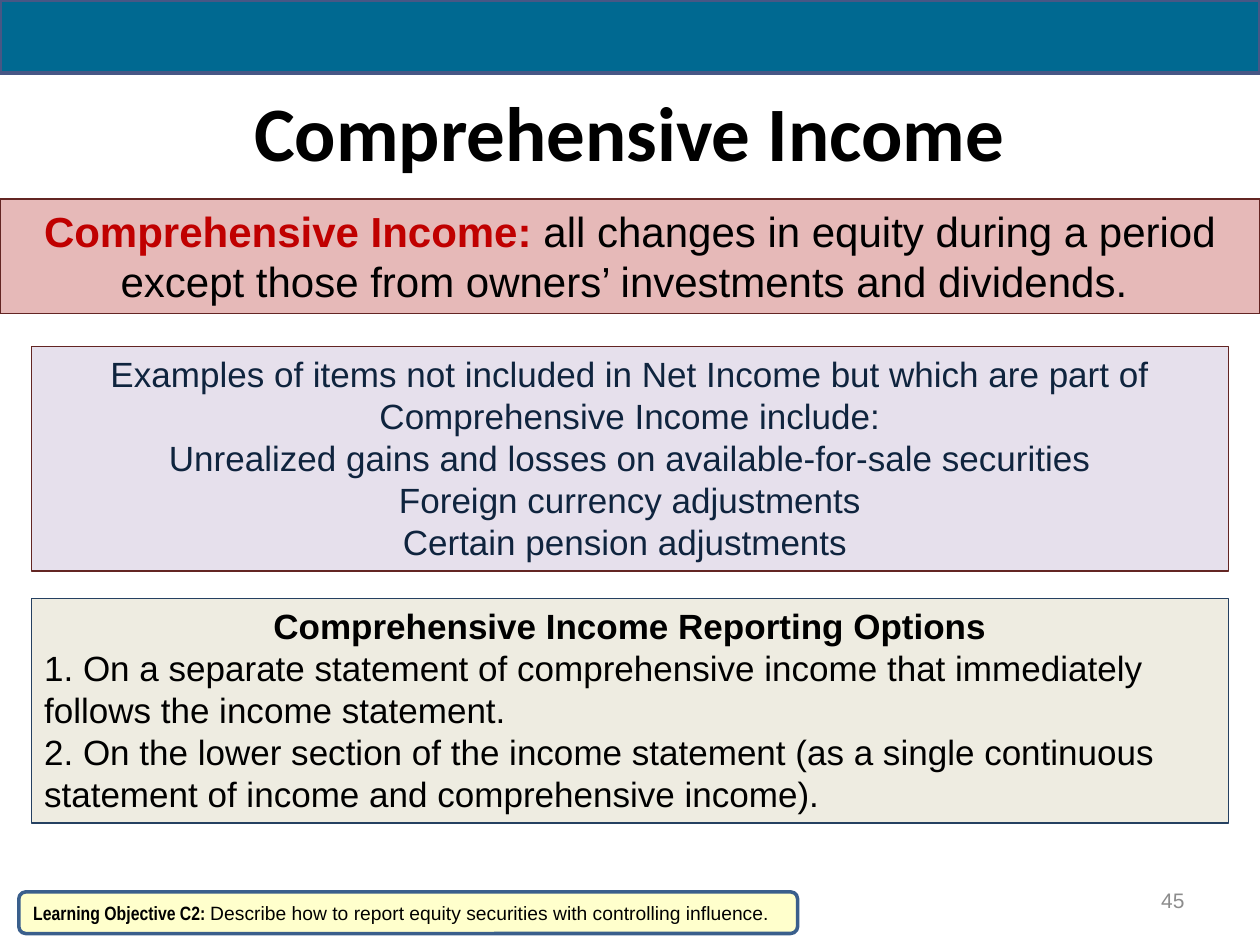
import pptx
from pptx.dml.color import RGBColor
from pptx.enum.shapes import MSO_SHAPE
from pptx.enum.text import MSO_ANCHOR, PP_ALIGN
from pptx.util import Cm, Pt

LEFT, CENTER, RIGHT = PP_ALIGN.LEFT, PP_ALIGN.CENTER, PP_ALIGN.RIGHT
TOP, MIDDLE = MSO_ANCHOR.TOP, MSO_ANCHOR.MIDDLE
RECT, ROUNDED = MSO_SHAPE.RECTANGLE, MSO_SHAPE.ROUNDED_RECTANGLE

# Content: a paragraph is (alignment, runs); a run is (text, size, colour, bold, font)
TITLE = [(CENTER, [("Comprehensive Income", 44, "000000", True, "Calibri")])]

DEFINITION = [(CENTER, [
    ("Comprehensive Income: ", 24, "C00000", True, "Arial"),
    ("all changes in equity during a period except those from owners’ "
     "investments and dividends. ", 24, "000000", False, "Arial"),
])]

EXAMPLES = [(CENTER, [(line, 20, "0F243E", False, "Arial")]) for line in (
    "Examples of items not included in Net Income but which are part of "
    "Comprehensive Income include:",
    "Unrealized gains and losses on available-for-sale securities",
    "Foreign currency adjustments",
    "Certain pension adjustments ",
)]

OPTIONS = [(align, [(line, 20, "000000", bold, "Arial")]) for align, bold, line in (
    (CENTER, True, "Comprehensive Income Reporting Options"),
    (LEFT, False, "1. On a separate statement of comprehensive income that "
                  "immediately follows the income statement."),
    (LEFT, False, "2. On the lower section of the income statement (as a single "
                  "continuous statement of income and comprehensive income)."),
)]

OBJECTIVE = [(LEFT, [
    ("Learning Objective C2: ", 11, "000000", True, "Arial Narrow"),
    ("Describe how to report equity securities with controlling influence.",
     11, "000000", False, "Arial"),
])]

PAGE_NUMBER = [(RIGHT, [("45", 12, "8C8C8C", False, "Arial")])]

# Layout in centimetres
WIDTH, HEIGHT = 25.4, 19.05
MARGIN = 0.64
BANNER_HEIGHT = 1.47
PANEL_TOP, PANEL_HEIGHT, PANEL_PITCH = 6.99, 4.52, 5.08
PANEL_WIDTH = WIDTH - 2 * MARGIN

# Boxes: outline, (left, top, width, height), fill, line, line width, anchor, content
BOXES = [
    (RECT, (0, 4.01, WIDTH, 2.31), "E6B9B8", "632523", 0.75, TOP, DEFINITION),
    (RECT, (MARGIN, PANEL_TOP, PANEL_WIDTH, PANEL_HEIGHT),
     "E6E0EC", "632523", 0.75, TOP, EXAMPLES),
    (RECT, (MARGIN, PANEL_TOP + PANEL_PITCH, PANEL_WIDTH, PANEL_HEIGHT),
     "EEECE1", "254061", 0.75, TOP, OPTIONS),
    (RECT, (0, 0, WIDTH, BANNER_HEIGHT), "006991", "475785", 2.25, MIDDLE, []),
    (ROUNDED, (0.38, 17.98, 15.7, 0.84), "FFFFCC", "3A5F8C", 2, MIDDLE, OBJECTIVE),
]


def rgb(value):
    return RGBColor.from_string(value)


def lengths(box):
    return [Cm(value) for value in box]


def write(frame, paragraphs, anchor):
    frame.word_wrap = True
    frame.vertical_anchor = anchor
    for index, (align, runs) in enumerate(paragraphs):
        paragraph = frame.add_paragraph() if index else frame.paragraphs[0]
        paragraph.alignment = align
        for text, size, colour, bold, font in runs:
            run = paragraph.add_run()
            run.text = text
            run.font.size = Pt(size)
            run.font.color.rgb = rgb(colour)
            run.font.bold = bold
            run.font.name = font


def add_box(slide, outline, box, fill, line, line_width, anchor, paragraphs):
    panel = slide.shapes.add_shape(outline, *lengths(box))
    panel.shadow.inherit = False
    panel.fill.solid()
    panel.fill.fore_color.rgb = rgb(fill)
    panel.line.color.rgb = rgb(line)
    panel.line.width = Pt(line_width)
    write(panel.text_frame, paragraphs, anchor)


def main():
    deck = pptx.Presentation()
    deck.slide_width, deck.slide_height = Cm(WIDTH), Cm(HEIGHT)
    slide = deck.slides.add_slide(deck.slide_layouts.get_by_name("Title Only"))

    # Title
    title = slide.shapes.title
    title.left, title.top, title.width, title.height = lengths(
        (1.27, BANNER_HEIGHT, WIDTH - 2 * 1.27, 2.34))
    write(title.text_frame, TITLE, MIDDLE)

    # Banner, panels and learning objective
    for box in BOXES:
        add_box(slide, *box)

    # Page number
    number = slide.shapes.add_textbox(*lengths((18.2, 17.65, 5.93, 1.01)))
    write(number.text_frame, PAGE_NUMBER, MIDDLE)

    deck.save("out.pptx")


if __name__ == "__main__":
    main()
